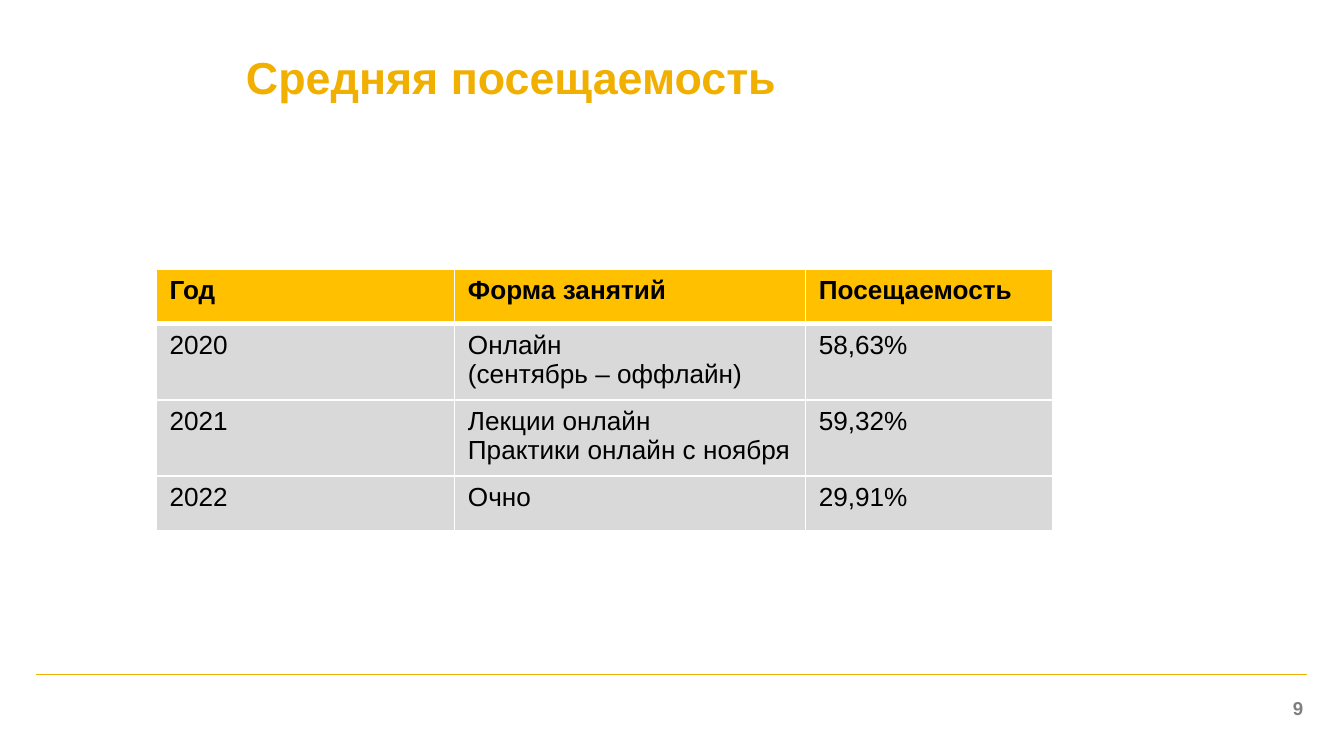
from lxml import etree
from pptx import Presentation
from pptx import util as u
from pptx.dml.color import RGBColor
from pptx.enum import shapes, text
from pptx.oxml.ns import qn

GOLD, AMBER, SILVER, GREY = "F1AF00", "FFC000", "D9D9D9", "7F7F7F"
BLACK, WHITE = "000000", "FFFFFF"

ATTENDANCE = [
    ["Год", "Форма занятий", "Посещаемость"],
    ["2020", "Онлайн\n(сентябрь – оффлайн)", "58,63%"],
    ["2021", "Лекции онлайн\nПрактики онлайн с ноября", "59,32%"],
    ["2022", "Очно", "29,91%"],
]


def color(hex_code):
    """Turn a hex string into a colour."""
    return RGBColor.from_string(hex_code)


def write(frame, words, size=14, ink=BLACK, bold=False, align=text.PP_ALIGN.LEFT):
    """Fill a text frame with formatted paragraphs, one for each line."""
    frame.text = words
    for paragraph in frame.paragraphs:
        paragraph.alignment = align
        for run in paragraph.runs:
            run.font.name = "Arial"
            run.font.size = u.Pt(size)
            run.font.bold = bold
            run.font.color.rgb = color(ink)


def add_label(slide, box, words, side_inset=0, anchor=text.MSO_ANCHOR.TOP, **style):
    """Add a wrapped text box."""
    frame = slide.shapes.add_textbox(*map(u.Cm, box)).text_frame
    frame.word_wrap = True
    frame.vertical_anchor = anchor
    frame.margin_left = frame.margin_right = u.Cm(side_inset)
    frame.margin_top = frame.margin_bottom = 0
    write(frame, words, **style)


def add_rule(slide, left, right, height):
    """Draw the thin horizontal footer line."""
    rule = slide.shapes.add_connector(
        shapes.MSO_CONNECTOR.STRAIGHT,
        u.Cm(left), u.Cm(height), u.Cm(right), u.Cm(height))
    rule.line.color.rgb = color(GOLD)
    rule.line.width = u.Pt(0.75)
    etree.SubElement(rule._element.spPr, qn("a:effectLst"))


def set_borders(cell, top, bottom):
    """Give a cell white borders of the stated widths in points."""
    properties = cell._tc.get_or_add_tcPr()
    widths = {"L": 1, "R": 1, "T": top, "B": bottom}
    for position, (side, width) in enumerate(widths.items()):
        border = etree.Element(qn(f"a:ln{side}"), w=str(u.Pt(width)))
        fill = etree.SubElement(border, qn("a:solidFill"))
        etree.SubElement(fill, qn("a:srgbClr"), val=WHITE)
        properties.insert(position, border)


def add_attendance_table(slide, left, top, column_widths, row_height):
    """Add the attendance table with its amber header."""
    table = slide.shapes.add_table(
        len(ATTENDANCE), len(column_widths), u.Cm(left), u.Cm(top),
        u.Cm(sum(column_widths)), u.Cm(row_height * len(ATTENDANCE))).table
    for column, width in zip(table.columns, column_widths):
        column.width = u.Cm(width)
    for row_number, entries in enumerate(ATTENDANCE):
        is_header = row_number == 0
        table.rows[row_number].height = u.Cm(row_height)
        for cell, words in zip(table.rows[row_number].cells, entries):
            write(cell.text_frame, words, bold=is_header)
            cell.fill.solid()
            cell.fill.fore_color.rgb = color(AMBER if is_header else SILVER)
            set_borders(cell, top=3 if row_number == 1 else 1,
                        bottom=3 if is_header else 1)


def main():
    """Build the attendance slide."""
    deck = Presentation()
    deck.slide_width, deck.slide_height = u.Cm(25.4), u.Cm(14.29)
    slide = deck.slides.add_slide(deck.slide_layouts[6])
    add_rule(slide, 0.69, 24.71, 12.75)
    add_label(slide, (4.5, 0.94, 19.2, 1.02), "Средняя посещаемость",
              side_inset=0.15, anchor=text.MSO_ANCHOR.MIDDLE,
              size=24, ink=GOLD, bold=True)
    add_attendance_table(slide, 2.95, 5.08, (5.64, 6.63, 4.67), 1.04)
    add_label(slide, (22.5, 13.18, 2.13, 0.43), "9",
              size=10, ink=GREY, bold=True, align=text.PP_ALIGN.RIGHT)
    deck.save("out.pptx")


if __name__ == "__main__":
    main()
